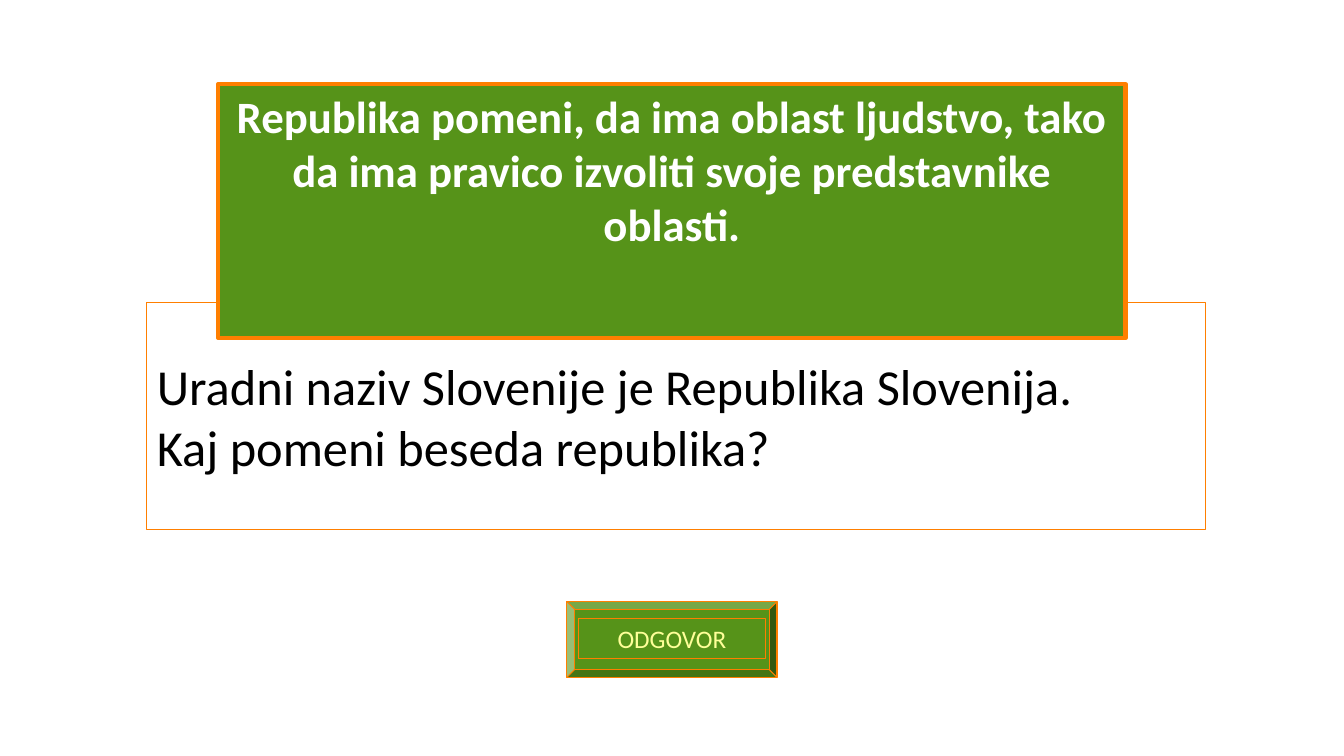
from pptx import Presentation
from pptx.dml.color import RGBColor
from pptx.enum.shapes import MSO_SHAPE
from pptx.enum.text import MSO_ANCHOR, PP_ALIGN
from pptx.util import Emu, Pt

RECTANGLE, BEVEL = MSO_SHAPE.RECTANGLE, MSO_SHAPE.BEVEL
TOP, MIDDLE = MSO_ANCHOR.TOP, MSO_ANCHOR.MIDDLE
LEFT, CENTER = PP_ALIGN.LEFT, PP_ALIGN.CENTER

EMU_PER_PX = 9525
FONT = "Calibri"
GREEN, ORANGE, WHITE, BLACK, YELLOW = "569319", "FF7F00", "FFFFFF", "000000", "FFFF99"


def px(length):
    return Emu(length * EMU_PER_PX)


def color(value):
    return RGBColor.from_string(value)


def add_panel(slide, box, fill, line_width=0.75, kind=RECTANGLE):
    shape = slide.shapes.add_shape(kind, *map(px, box))
    shape.shadow.inherit = False
    shape.fill.solid()
    shape.fill.fore_color.rgb = color(fill)
    shape.line.color.rgb = color(ORANGE)
    shape.line.width = Pt(line_width)
    return shape


def add_text(shape, lines, size, text_color, bold=False, align=LEFT, anchor=TOP):
    frame = shape.text_frame
    frame.word_wrap = True
    frame.vertical_anchor = anchor
    for index, line in enumerate(lines):
        paragraph = frame.paragraphs[0] if index == 0 else frame.add_paragraph()
        paragraph.alignment = align
        run = paragraph.add_run()
        run.text = line
        run.font.name = FONT
        run.font.size = Pt(size)
        run.font.bold = bold
        run.font.color.rgb = color(text_color)


def add_answer_button(slide, box):
    left, top, width, height = box
    button = add_panel(slide, box, GREEN, kind=BEVEL)
    button.adjustments[0] = 0.104
    # Label inside the bevel
    label = add_panel(slide, (left + 11, top + 16, width - 22, 38), GREEN)
    add_text(label, ["ODGOVOR"], 18, YELLOW, align=CENTER)


def add_question(slide, box):
    panel = add_panel(slide, box, WHITE)
    lines = ["Uradni naziv Slovenije je Republika Slovenija.",
             "Kaj pomeni beseda republika?"]
    add_text(panel, lines, 36, BLACK, anchor=MIDDLE)


def add_answer(slide, box):
    panel = add_panel(slide, box, GREEN, line_width=3)
    answer = ("Republika pomeni, da ima oblast ljudstvo, tako da ima pravico "
              "izvoliti svoje predstavnike oblasti.")
    add_text(panel, [answer], 32, WHITE, bold=True, align=CENTER)


def main():
    presentation = Presentation()
    presentation.slide_width, presentation.slide_height = px(1280), px(720)
    slide = presentation.slides.add_slide(presentation.slide_layouts[6])
    add_answer_button(slide, (540, 573, 200, 72))
    add_question(slide, (140, 288, 1008, 216))
    add_answer(slide, (208, 80, 864, 242))
    presentation.save("out.pptx")


if __name__ == "__main__":
    main()
